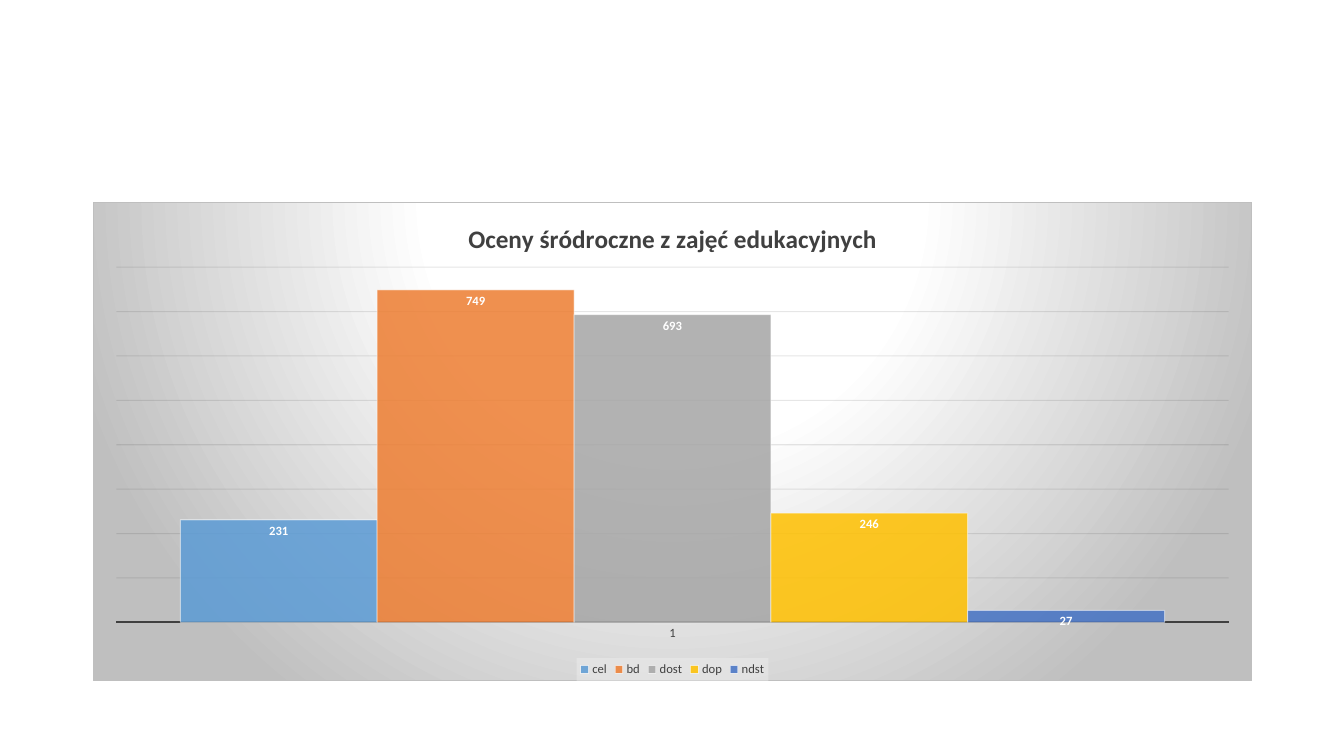
from lxml import etree
from pptx import Presentation, util as u
from pptx.chart.data import CategoryChartData
from pptx.dml.color import RGBColor
from pptx.enum import chart as ch
from pptx.oxml import parse_xml
from pptx.oxml.ns import qn

NS = ('xmlns:c="http://schemas.openxmlformats.org/drawingml/2006/chart" '
      'xmlns:a="http://schemas.openxmlformats.org/drawingml/2006/main"')
GRADES = [("cel", 231, "5B9BD5"), ("bd", 749, "ED7D31"), ("dost", 693, "A5A5A5"),
          ("dop", 246, "FFC000"), ("ndst", 27, "4472C4")]


def paint(fill, tint, alpha=100):
    fill.solid()
    fill.fore_color.rgb = RGBColor.from_string(tint)
    if alpha < 100:
        node = fill._xPr.find(".//" + qn("a:srgbClr"))
        etree.SubElement(node, qn("a:alpha")).set("val", str(alpha * 1000))


def style(font, size, tint, bold=False):
    font.name, font.size, font.bold = "Calibri", u.Pt(size), bold
    paint(font.fill, tint)


# Slide
deck = Presentation()
deck.slide_width, deck.slide_height = u.Inches(13.33), u.Inches(7.5)
slide = deck.slides.add_slide(deck.slide_layouts[6])

# Chart with one series per grade
data = CategoryChartData()
data.categories = ["1"]
for name, count, tint in GRADES:
    data.add_series(name, [count])
chart = slide.shapes.add_chart(
    ch.XL_CHART_TYPE.COLUMN_CLUSTERED, u.Inches(0.92), u.Inches(2),
    u.Inches(11.5), u.Inches(4.76), data).chart
style(chart.font, 10, "000000")

# Title
chart.has_title = True
title = chart.chart_title
title.include_in_layout = False
title.text_frame.text = "Oceny śródroczne z zajęć edukacyjnych"
style(title.text_frame.paragraphs[0].runs[0].font, 18, "404040", True)

# Columns and their labels
plot = chart.plots[0]
plot.gap_width, plot.overlap = 65, 0
plot.vary_by_categories = False
for bar, (name, count, tint) in zip(plot.series, GRADES):
    paint(bar.format.fill, tint, 85)
    bar.format.line.width = u.Pt(0.75)
    paint(bar.format.line.fill, "FFFFFF", 50)
    tag = bar.data_labels
    tag.show_value = True
    tag.position = ch.XL_LABEL_POSITION.INSIDE_END
    style(tag.font, 9, "FFFFFF", True)

# Axes
base = chart.category_axis
base.major_tick_mark = base.minor_tick_mark = ch.XL_TICK_MARK.NONE
base.format.line.width = u.Pt(1.5)
paint(base.format.line.fill, "404040")
style(base.tick_labels.font, 9, "404040")
scale = chart.value_axis
scale.minimum_scale, scale.maximum_scale, scale.major_unit = 0, 800, 100
scale.has_major_gridlines = True
grid = scale.major_gridlines.format.line
grid.width = u.Pt(0.75)
paint(grid.fill, "0D0D0D", 10)
scale.visible = False

# Legend
chart.has_legend = True
key = chart.legend
key.position = ch.XL_LEGEND_POSITION.BOTTOM
key.include_in_layout = False
style(key.font, 9, "404040")
key._element.find(qn("c:txPr")).addprevious(parse_xml(
    f'<c:spPr {NS}><a:solidFill><a:srgbClr val="F2F2F2"><a:alpha val="39000"/>'
    '</a:srgbClr></a:solidFill></c:spPr>'))

# Plot area, as shares of the chart
area = chart._chartSpace.find(".//" + qn("c:plotArea"))
for old in area.findall(qn("c:layout")):
    area.remove(old)
share = {"x": 0.02, "y": 0.136, "w": 0.96, "h": 0.742}
modes = '<c:xMode val="edge"/><c:yMode val="edge"/>'
sizes = "".join(f'<c:{side} val="{part}"/>' for side, part in share.items())
area.insert(0, parse_xml(
    f'<c:layout {NS}><c:manualLayout><c:layoutTarget val="inner"/>'
    f'{modes}{sizes}</c:manualLayout></c:layout>'))

# Round gradient and border behind the chart
stops = "".join(f'<a:gs pos="{pos}000"><a:srgbClr val="{tint}"/></a:gs>'
                for pos, tint in [(0, "FFFFFF"), (39, "FFFFFF"), (100, "BFBFBF")])
chart._chartSpace.find(qn("c:txPr")).addprevious(parse_xml(
    f'<c:spPr {NS}><a:gradFill><a:gsLst>{stops}</a:gsLst><a:path path="circle">'
    '<a:fillToRect l="50000" t="-80000" r="50000" b="180000"/></a:path></a:gradFill>'
    f'<a:ln w="{u.Pt(0.75)}"><a:solidFill><a:srgbClr val="BFBFBF"/></a:solidFill></a:ln>'
    '</c:spPr>'))

deck.save("out.pptx")
